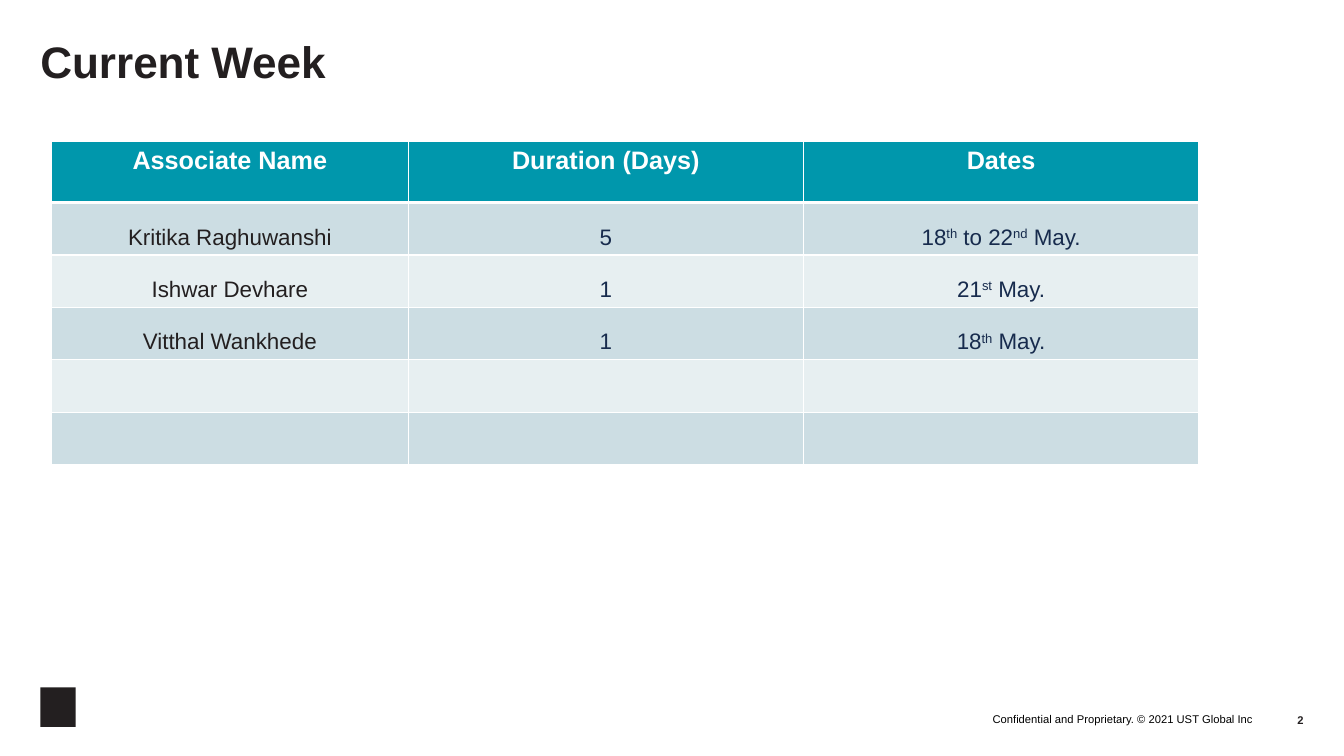
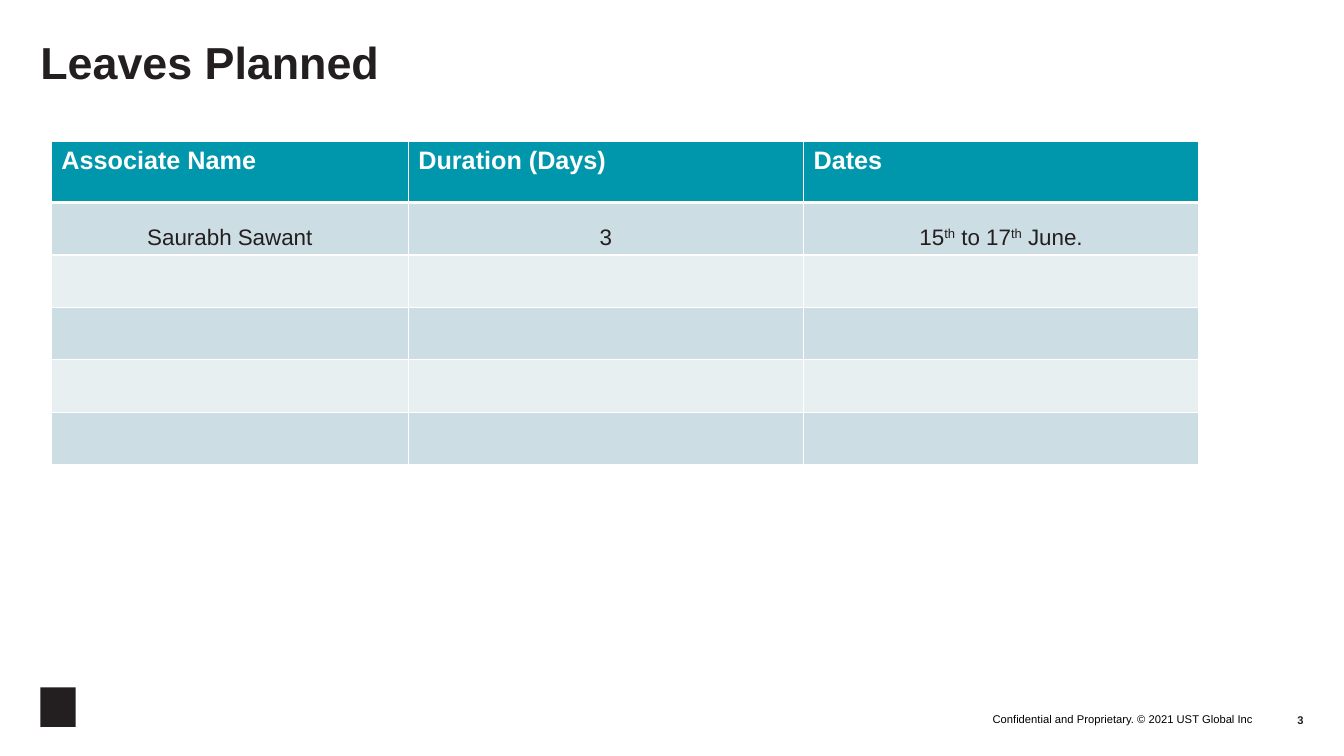
from pptx import Presentation
from pptx.dml.color import RGBColor
from pptx.enum import shapes, text
from pptx.oxml import parse_xml
from pptx.oxml.ns import nsdecls
from pptx.util import Inches, Pt

COLORS = {
    "ink": "231F20", "navy": "172B4D", "black": "000000", "white": "FFFFFF",
    "header": "0097AC", "band_dark": "CCDDE3", "band_light": "E7EFF1",
}
FONT = "Arial"
LEFT, CENTER, RIGHT = (text.PP_ALIGN.LEFT, text.PP_ALIGN.CENTER,
                       text.PP_ALIGN.RIGHT)
TOP, BOTTOM = text.MSO_ANCHOR.TOP, text.MSO_ANCHOR.BOTTOM

COPYRIGHT = "Confidential and Proprietary. © 2021 UST Global Inc"
HEADERS = ["Associate Name", "Duration (Days)", "Dates"]
COLUMN_WIDTHS = [3.54, 3.92, 3.92]
HEADER_HEIGHT, ROW_HEIGHT, BODY_ROWS = 0.61, 0.52, 5

# Text between carets is raised
LEAVE_SLIDES = [
    {"number": 2, "title": "Current Week", "title_size": 31.5,
     "header_align": CENTER, "detail_color": "navy",
     "leaves": [
         ["Kritika Raghuwanshi", "5", "18^th^ to 22^nd^ May."],
         ["Ishwar Devhare", "1", "21^st^ May."],
         ["Vitthal Wankhede", "1", "18^th^ May."],
     ]},
    {"number": 3, "title": "Leaves Planned", "title_size": 32,
     "header_align": LEFT, "detail_color": "ink",
     "leaves": [["Saurabh Sawant", "3", "15^th^ to 17^th^ June."]]},
]


def rgb(name):
    return RGBColor.from_string(COLORS[name])


def set_attributes(target, values):
    for name, value in values.items():
        setattr(target, name, value)


def write(paragraph, content, size, color, bold=False, align=LEFT):
    """Fill a paragraph, raising every second caret-separated piece."""
    paragraph.alignment = align
    for index, piece in enumerate(content.split("^")):
        run = paragraph.add_run()
        run.text = piece
        set_attributes(run.font, {"name": FONT, "size": Pt(size), "bold": bold})
        run.font.color.rgb = rgb(color)
        if index % 2:
            run._r.get_or_add_rPr().set("baseline", "30000")


def format_frame(frame, anchor, wrap=True):
    set_attributes(frame, {
        "margin_left": 0, "margin_right": 0, "margin_top": 0,
        "margin_bottom": 0, "vertical_anchor": anchor, "word_wrap": wrap,
        "auto_size": text.MSO_AUTO_SIZE.NONE})


def add_title(slide, content, size):
    title = slide.shapes.title
    set_attributes(title, {"left": Inches(0.4), "top": Inches(0.4),
                           "width": Inches(12.53), "height": Inches(1)})
    format_frame(title.text_frame, TOP)
    paragraph = title.text_frame.paragraphs[0]
    paragraph.line_spacing = 0.9
    write(paragraph, content, size, "ink", bold=True)


def add_label(slide, box, content, color, bold=False, wrap=True):
    label = slide.shapes.add_textbox(*map(Inches, box))
    format_frame(label.text_frame, BOTTOM, wrap)
    write(label.text_frame.paragraphs[0], content, 8, color, bold, RIGHT)


def add_footer(slide, number):
    # Plain block in the logo's place
    mark = slide.shapes.add_shape(
        shapes.MSO_SHAPE.RECTANGLE,
        *map(Inches, (0.4, 6.82, 0.35, 0.39)))
    mark.shadow.inherit = False
    mark.fill.solid()
    mark.fill.fore_color.rgb = rgb("ink")
    mark.line.fill.background()

    add_label(slide, (8.99, 7, 3.44, 0.2), COPYRIGHT, "black", wrap=False)
    add_label(slide, (12.43, 6.91, 0.5, 0.3), str(number), "ink", bold=True)


def style_cell(cell, fill, top=1, bottom=1):
    """Draw white borders, then the fill that must follow them in the XML."""
    properties = cell._tc.get_or_add_tcPr()
    for side, points in {"L": 1, "R": 1, "T": top, "B": bottom}.items():
        properties.append(parse_xml(
            f'<a:ln{side} {nsdecls("a")} w="{Pt(points)}"><a:solidFill>'
            f'<a:srgbClr val="{COLORS["white"]}"/></a:solidFill></a:ln{side}>'))
    cell.fill.solid()
    cell.fill.fore_color.rgb = rgb(fill)


def add_leave_table(slide, leaves, header_align, detail_color):
    height = HEADER_HEIGHT + BODY_ROWS * ROW_HEIGHT
    table = slide.shapes.add_table(
        BODY_ROWS + 1, len(HEADERS), Inches(0.51), Inches(1.4),
        Inches(sum(COLUMN_WIDTHS)), Inches(height)).table
    for column, width in zip(table.columns, COLUMN_WIDTHS):
        column.width = Inches(width)
    for index, row in enumerate(table.rows):
        row.height = Inches(ROW_HEIGHT if index else HEADER_HEIGHT)

    # Header row
    for cell, heading in zip(table.rows[0].cells, HEADERS):
        style_cell(cell, "header", bottom=3)
        write(cell.text_frame.paragraphs[0], heading, 18, "white", True,
              header_align)

    # Banded body rows, with the unused ones left empty
    for index in range(1, BODY_ROWS + 1):
        fill = "band_dark" if index % 2 else "band_light"
        values = leaves[index - 1] if index <= len(leaves) else []
        cells = list(table.rows[index].cells)
        for cell in cells:
            style_cell(cell, fill, top=3 if index == 1 else 1)
        for column, (cell, value) in enumerate(zip(cells, values)):
            cell.vertical_anchor = BOTTOM
            write(cell.text_frame.paragraphs[0], value, 16,
                  detail_color if column else "ink", align=CENTER)


def main():
    presentation = Presentation()
    presentation.slide_width = Inches(13.33)
    presentation.slide_height = Inches(7.5)
    title_only = presentation.slide_layouts[5]
    for page in LEAVE_SLIDES:
        slide = presentation.slides.add_slide(title_only)
        add_footer(slide, page["number"])
        add_title(slide, page["title"], page["title_size"])
        add_leave_table(slide, page["leaves"], page["header_align"],
                        page["detail_color"])
    presentation.save("out.pptx")


if __name__ == "__main__":
    main()
